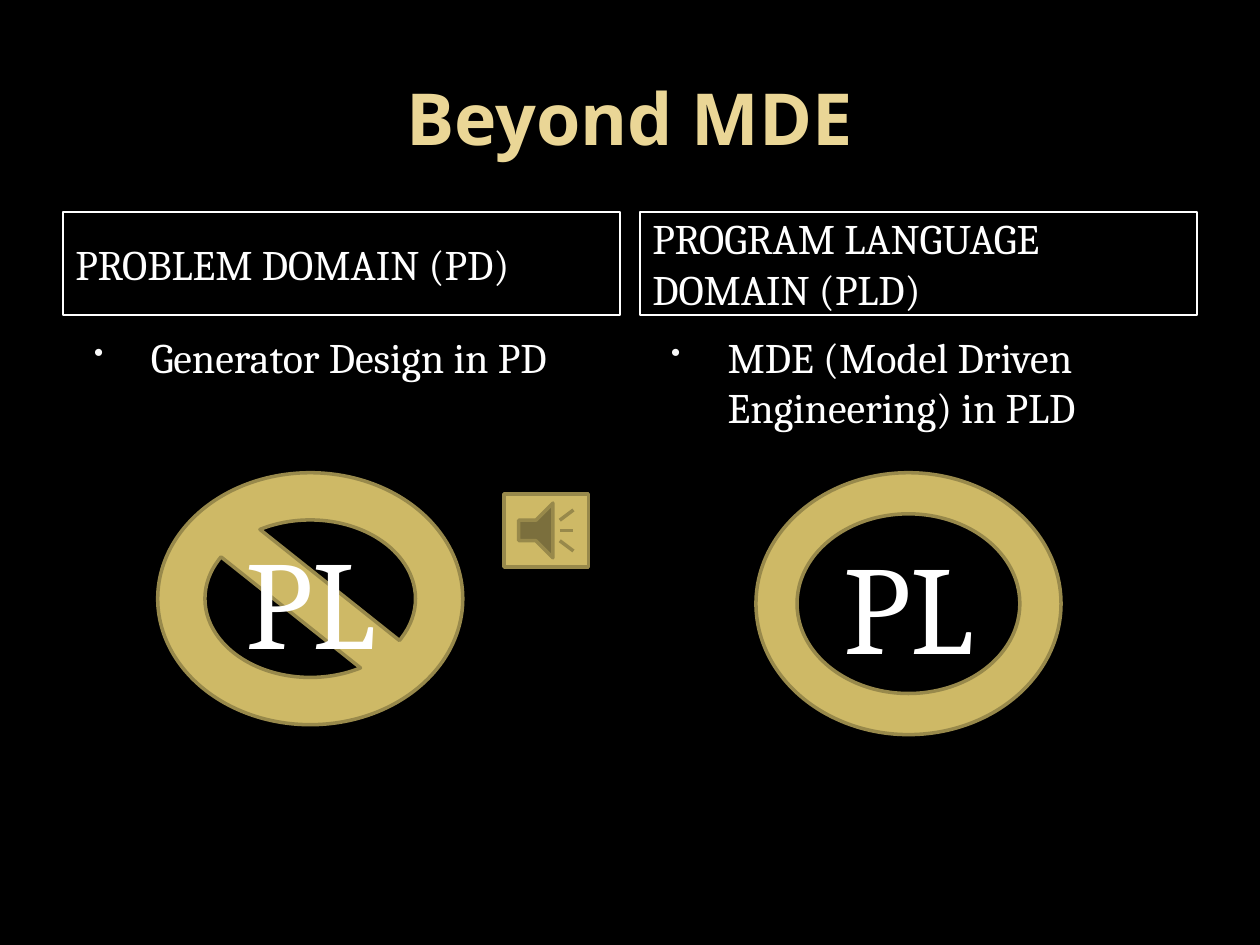
import pptx
import pptx.dml.color
import pptx.enum.shapes
import pptx.enum.text
import pptx.oxml
import pptx.oxml.ns
import pptx.util

Cm, Pt = pptx.util.Cm, pptx.util.Pt
SHAPE = pptx.enum.shapes.MSO_SHAPE
ALIGN = pptx.enum.text.PP_ALIGN
ANCHOR = pptx.enum.text.MSO_ANCHOR

COLORS = {
    "background": "000000",
    "title": "EAD696",
    "text": "FFFFFF",
    "bullet": "F9F9F9",
    "gold": "CEB966",
    "gold edge": "98894B",
}


def rgb(name):
    return pptx.dml.color.RGBColor.from_string(COLORS[name])


def write(shape, text, size, color="text", face="Cambria", bold=False,
          align=ALIGN.LEFT, anchor=ANCHOR.MIDDLE, bulleted=False):
    frame = shape.text_frame
    frame.word_wrap = True
    frame.vertical_anchor = anchor
    paragraph = frame.paragraphs[0]
    paragraph.text = text
    paragraph.alignment = align
    if bulleted:
        add_bullet(paragraph)
    font = paragraph.font
    font.name, font.size, font.bold = face, Pt(size), bold
    font.color.rgb = rgb(color)


def add_bullet(paragraph):
    properties = paragraph._p.get_or_add_pPr()
    properties.set("marL", str(Cm(1.52)))
    properties.set("indent", str(Cm(-1.14)))
    namespace = pptx.oxml.ns.nsdecls("a")
    for element in (
        f'<a:buClr {namespace}><a:srgbClr val="{COLORS["bullet"]}"/></a:buClr>',
        f'<a:buSzPct {namespace} val="65000"/>',
        f'<a:buChar {namespace} char="•"/>',
    ):
        properties.append(pptx.oxml.parse_xml(element))


def add_title(slide, left, top, width, height, text):
    title = slide.shapes.add_textbox(Cm(left), Cm(top), Cm(width), Cm(height))
    write(title, text, 41, "title", "Open Sans", bold=True, align=ALIGN.CENTER)


def add_column(slide, left, top, width, height, heading, point):
    heading_height, gap = 2.08, 0.2
    # Outlined heading
    header = slide.shapes.add_shape(
        SHAPE.RECTANGLE, Cm(left), Cm(top), Cm(width), Cm(heading_height))
    header.shadow.inherit = False
    header.fill.background()
    header.line.color.rgb = rgb("text")
    header.line.width = Pt(1)
    write(header, heading, 24)
    # Bulleted point
    body_offset = heading_height + gap
    body = slide.shapes.add_textbox(
        Cm(left), Cm(top + body_offset), Cm(width), Cm(height - body_offset))
    write(body, point, 24, anchor=ANCHOR.TOP, bulleted=True)


def add_gold_shape(slide, kind, left, top, width, height):
    symbol = slide.shapes.add_shape(kind, Cm(left), Cm(top), Cm(width), Cm(height))
    symbol.shadow.inherit = False
    symbol.fill.solid()
    symbol.fill.fore_color.rgb = rgb("gold")
    symbol.line.color.rgb = rgb("gold edge")
    symbol.line.width = Pt(2)
    return symbol


def main():
    deck = pptx.Presentation()
    deck.slide_width, deck.slide_height = Cm(25.4), Cm(19.05)
    slide = deck.slides.add_slide(deck.slide_layouts[6])
    slide.background.fill.solid()
    slide.background.fill.fore_color.rgb = rgb("background")

    add_title(slide, 1.27, 0.76, 22.86, 3.18, "Beyond MDE")

    # Two domains side by side
    add_column(slide, 1.27, 4.27, 11.23, 12.75,
               "PROBLEM DOMAIN (PD)", "Generator Design in PD")
    add_column(slide, 12.9, 4.27, 11.23, 12.75,
               "PROGRAM LANGUAGE DOMAIN (PLD)",
               "MDE (Model Driven Engineering) in PLD")

    # Programming language excluded on the left, included on the right
    without_pl = add_gold_shape(slide, SHAPE.NO_SYMBOL, 3.18, 9.53, 6.15, 5.08)
    with_pl = add_gold_shape(slide, SHAPE.DONUT, 15.24, 9.53, 6.15, 5.28)
    with_pl.adjustments[0] = 0.157
    for symbol in (without_pl, with_pl):
        write(symbol, "PL", 72, align=ALIGN.CENTER)

    # Sound button
    add_gold_shape(slide, SHAPE.ACTION_BUTTON_SOUND, 10.16, 9.96, 1.7, 1.47)

    deck.save("out.pptx")


if __name__ == "__main__":
    main()
